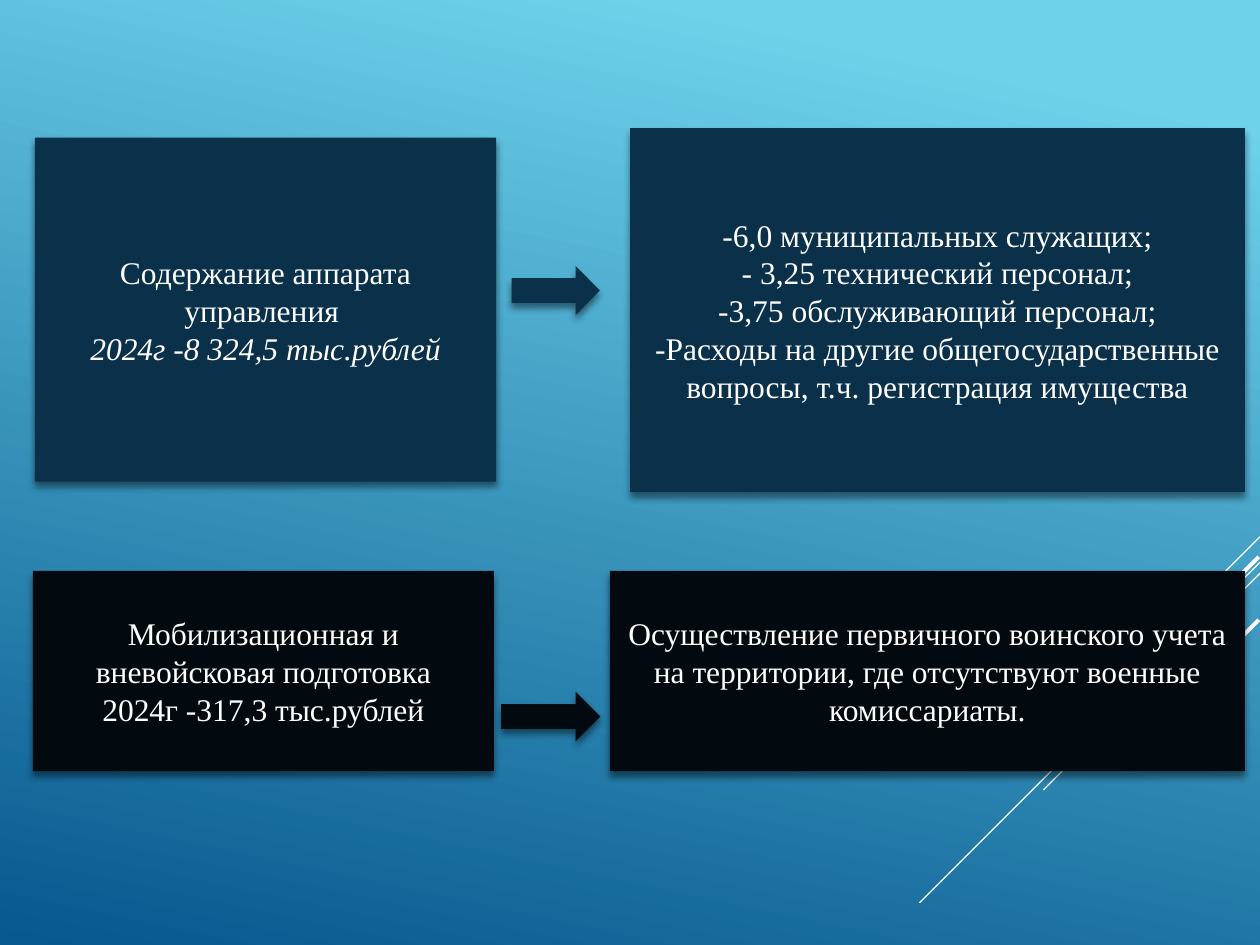
from dataclasses import dataclass

from lxml import etree
from pptx import Presentation
from pptx import util as u
from pptx.dml.color import RGBColor
from pptx.enum import shapes, text
from pptx.oxml.ns import qn


@dataclass(frozen=True)
class Theme:
    sky: str = "6ED2EB"
    deep: str = "06588E"
    navy: str = "0A304A"
    black: str = "020A0F"
    white: str = "FFFFFF"
    shadow: str = "000000"
    font: str = "Times New Roman"
    body: float = 18
    thin: float = 0.75
    thick: float = 2.25


def add_text(para, words, *, font, size, color, italic=False):
    span = para.add_run()
    span.text = words
    span.font.name = font
    span.font.size = u.Pt(size)
    span.font.italic = italic
    span.font.color.rgb = RGBColor.from_string(color)
    return span


class SlideBuilder:
    def __init__(self, page, theme):
        self.page = page
        self.theme = theme

    def background(self):
        fill = self.page.background.fill
        fill.gradient()
        fill.gradient_angle = 360 - 102
        stops = ((0.1, self.theme.sky), (1, self.theme.deep))
        for stop, (position, color) in zip(fill.gradient_stops, stops):
            stop.position = position
            stop.color.rgb = RGBColor.from_string(color)

    def diagonal(self, right, top, run, width):
        ends = (right, top, right - run, top + run)
        line = self.page.shapes.add_connector(
            shapes.MSO_CONNECTOR.STRAIGHT, *map(u.Pt, ends))
        line.line.color.rgb = RGBColor.from_string(self.theme.white)
        line.line.width = u.Pt(width)
        etree.SubElement(line._element.spPr, qn("a:effectLst"))

    def shadow(self, shape):
        shape.shadow.inherit = False
        effects = shape._element.spPr.find(qn("a:effectLst"))
        outer = etree.SubElement(
            effects, qn("a:outerShdw"), blurRad=str(u.Pt(4)), dist=str(u.Pt(3)),
            dir=str(90 * 60000), rotWithShape="0")
        color = etree.SubElement(outer, qn("a:srgbClr"), val=self.theme.shadow)
        etree.SubElement(color, qn("a:alpha"), val="46000")

    def solid(self, kind, bounds, color):
        shape = self.page.shapes.add_shape(kind, *map(u.Pt, bounds))
        shape.fill.solid()
        shape.fill.fore_color.rgb = RGBColor.from_string(color)
        shape.line.fill.background()
        self.shadow(shape)
        return shape

    def panel(self, bounds, color, lines, italic_lines=()):
        box = self.solid(shapes.MSO_SHAPE.RECTANGLE, bounds, color)
        frame = box.text_frame
        frame.word_wrap = True
        frame.vertical_anchor = text.MSO_ANCHOR.MIDDLE
        for index, words in enumerate(lines):
            para = frame.add_paragraph() if index else frame.paragraphs[0]
            para.alignment = text.PP_ALIGN.CENTER
            add_text(para, words, font=self.theme.font, size=self.theme.body,
                     color=self.theme.white, italic=index in italic_lines)

    def arrow(self, bounds, color, head=0.5):
        arrow = self.solid(shapes.MSO_SHAPE.RIGHT_ARROW, bounds, color)
        arrow.adjustments[1] = head


def main():
    deck = Presentation()
    deck.slide_width, deck.slide_height = u.Pt(720), u.Pt(540)
    page = deck.slides.add_slide(deck.slide_layouts[6])
    theme = Theme()
    builder = SlideBuilder(page, theme)

    builder.background()
    for right, top, run, width in (
        (720, 306.7, 59.8, theme.thin),
        (720, 321.3, 194.6, theme.thin),
        (720, 327.6, 123.8, theme.thin),
        (719.3, 318.2, 113, theme.thick),
        (719.3, 354.2, 82, theme.thick),
    ):
        builder.diagonal(right, top, run, width)

    builder.panel((20, 78.7, 263.5, 196.6), theme.navy, (
        "Содержание аппарата управления ",
        "2024г -8 324,5 тыс.рублей",
    ), italic_lines=(1,))
    builder.panel((18.8, 326.2, 263.5, 114.5), theme.black, (
        "Мобилизационная и вневойсковая подготовка",
        "2024г -317,3 тыс.рублей",
    ))
    builder.panel((360, 73.2, 351.4, 208), theme.navy, (
        "-6,0 муниципальных служащих;",
        "- 3,25 технический персонал;",
        "-3,75 обслуживающий персонал;",
        "-Расходы на другие общегосударственные вопросы, "
        "т.ч. регистрация имущества",
    ))
    builder.panel((348.5, 326.2, 362.9, 114.5), theme.black, (
        "Осуществление первичного воинского учета на территории, "
        "где отсутствуют военные комиссариаты.",
    ))
    builder.arrow((292.4, 151.9, 50.4, 28.3), theme.navy, head=0.49)
    builder.arrow((286.4, 395.3, 56.7, 28.3), theme.black)

    deck.save("out.pptx")


if __name__ == "__main__":
    main()
